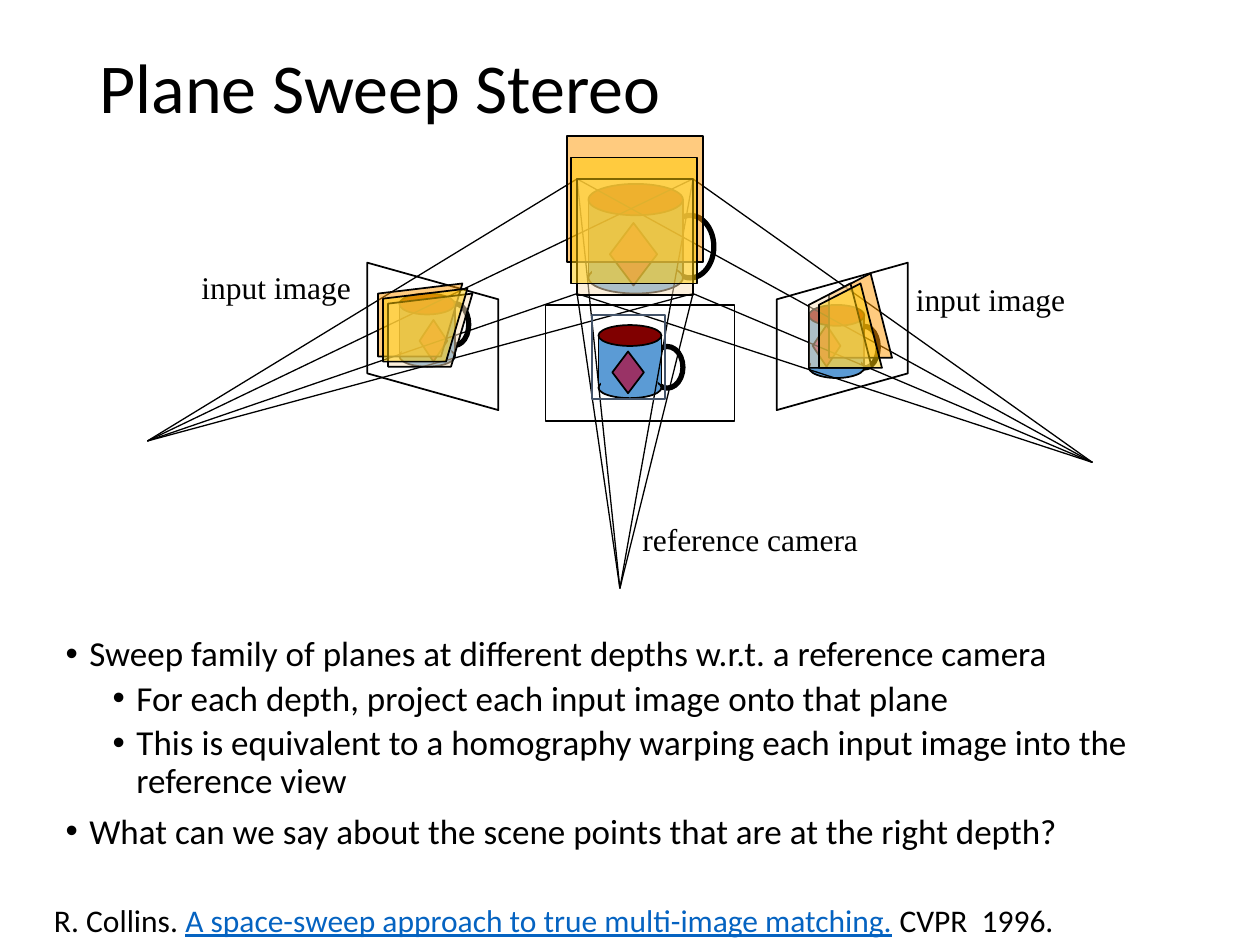
from dataclasses import dataclass

from lxml import etree
from pptx import Presentation
from pptx import util as u
from pptx.dml.color import RGBColor
from pptx.enum import shapes, text
from pptx.oxml.ns import qn


@dataclass(frozen=True)
class Theme:
    ink: str = "000000"
    link: str = "0563C1"
    slate: str = "44546A"
    blue: str = "5B9BD5"
    maroon: str = "800000"
    plum: str = "993366"
    far: str = "FF9900"
    near: str = "FDE3BA"
    middle: str = "FFCC00"
    sans: str = "Calibri"
    serif: str = "Times New Roman"
    title: int = 40
    body: int = 20
    label: int = 18


THEME = Theme()
KIND = shapes.MSO_SHAPE
GRID = 2.54  # centimetres in one diagram unit

# Content
TITLE = "Plane Sweep Stereo"
BULLETS = [
    (0, "Sweep family of planes at different depths w.r.t. a reference camera"),
    (1, "For each depth, project each input image onto that plane"),
    (1, "This is equivalent to a homography warping each input image into the reference view"),
    (0, "What can we say about the scene points that are at the right depth?"),
]
LABELS = [
    ("reference camera", (5, 4.08, 1.92, 0.4)),
    ("input image", (1.5, 2.08, 1.67, 0.4)),
    ("input image", (7.17, 2.17, 1.67, 0.4)),
]
CITATION = [
    ("R. Collins. ", THEME.ink, False),
    ("A space-sweep approach to true multi-image matching.", THEME.link, True),
    (" CVPR  1996.", THEME.ink, False),
]

# Cups: left, top, width, height, then handle and diamond offsets
SCENE_CUP = (4.67, 1.46, 0.75, 0.87, (0.62, 0.25), (0.17, 0.31))
IMAGE_CUPS = [
    (4.75, 2.58, 0.5, 0.58, (0.42, 0.17), (0.11, 0.21)),
    (6.42, 2.42, 0.44, 0.58, (0.33, 0.17), (0.03, 0.16)),
    (3.17, 2.33, 0.44, 0.58, (0.33, 0.08), (0.16, 0.21)),
]

# Rays from each camera to the corners of the near plane
CAMERAS = [(4.92, 4.67), (8.67, 3.67), (1.17, 3.5)]
CORNERS = [(x, y) for y in (1.42, 2.33) for x in (4.58, 5.5)]

# Swept planes: colour, reference rectangle, left and right image origins
PLANES = [
    (THEME.far, (4.5, 1.08, 1.08, 1), (3, 2.25), (6.58, 2.17)),
    (THEME.near, (4.58, 1.42, 0.92, 0.92), (3.08, 2.33), (6.42, 2.25)),
    (THEME.middle, (4.53, 1.25, 1, 1), (3.04, 2.29), (6.5, 2.25)),
]
LEFT_QUAD = [(0, 0.08), (0.67, 0), (0.5, 0.58), (0, 0.58)]
RIGHT_QUAD = [(0, 0.17), (0.33, 0), (0.5, 0.67), (0, 0.67)]


def units(*values):
    return [u.Cm(GRID * value) for value in values]


def paint(shape, fill=None, line=THEME.ink, width=1, alpha=None):
    shape.shadow.inherit = False
    if fill:
        shape.fill.solid()
        shape.fill.fore_color.rgb = RGBColor.from_string(fill)
        if alpha:
            color = shape.fill._xPr.find(qn("a:solidFill"))[0]
            etree.SubElement(color, qn("a:alpha")).set("val", str(alpha * 1000))
    else:
        shape.fill.background()
    if line:
        shape.line.color.rgb = RGBColor.from_string(line)
        shape.line.width = u.Pt(width)
    else:
        shape.line.fill.background()
    return shape


def add_preset(parent, kind, frame, **style):
    return paint(parent.shapes.add_shape(kind, *units(*frame)), **style)


def add_cup(page, cup):
    left, top, width, height, handle, diamond = cup
    group = page.shapes.add_group_shape()
    half = (width / 2, height * 0.57)
    rim = height * 0.286
    add_preset(group, KIND.OVAL, (left + handle[0], top + handle[1], *half), width=3)
    add_preset(group, KIND.RECTANGLE, (left, top + rim / 2, width, height - rim), fill=THEME.blue)
    add_preset(group, KIND.OVAL, (left, top + height - rim, width, rim), fill=THEME.blue)
    add_preset(group, KIND.OVAL, (left, top, width, rim), fill=THEME.maroon)
    add_preset(group, KIND.RECTANGLE,
               (left + width * 0.04, top + height * 0.59, width * 0.9, rim),
               fill=THEME.blue, line=None)
    add_preset(group, KIND.DIAMOND, (left + diamond[0], top + diamond[1], *half), fill=THEME.plum)


def add_rays(page, camera):
    group = page.shapes.add_group_shape()
    for corner in CORNERS:
        ray = group.shapes.add_connector(
            shapes.MSO_CONNECTOR.STRAIGHT, *units(*corner, *camera))
        ray.line.color.rgb = RGBColor.from_string(THEME.ink)
        ray.line.width = u.Pt(0.75)
        etree.SubElement(ray._element.spPr, qn("a:effectLst"))


def add_plane(page, color, frame, left_origin, right_origin):
    group = page.shapes.add_group_shape()
    add_preset(group, KIND.RECTANGLE, frame, fill=color, alpha=50)
    for origin, quad in ((left_origin, LEFT_QUAD), (right_origin, RIGHT_QUAD)):
        points = [units(origin[0] + x, origin[1] + y) for x, y in quad]
        builder = group.shapes.build_freeform(*points[0])
        builder.add_line_segments(points[1:], close=True)
        paint(builder.convert_to_shape(), fill=color, alpha=50)


def place(box, frame, anchor):
    box.left, box.top, box.width, box.height = units(*frame)
    box.text_frame.word_wrap = True
    box.text_frame.auto_size = text.MSO_AUTO_SIZE.NONE
    box.text_frame.vertical_anchor = anchor


def add_span(para, words, size, face=THEME.sans, color=THEME.ink, underline=False):
    span = para.add_run()
    span.text = words
    span.font.size = u.Pt(size)
    span.font.name = face
    span.font.color.rgb = RGBColor.from_string(color)
    span.font.underline = underline


def add_bullets(box):
    for index, (level, words) in enumerate(BULLETS):
        frame = box.text_frame
        para = frame.add_paragraph() if index else frame.paragraphs[0]
        para.level = level
        props = para._p.get_or_add_pPr()
        props.set("marL", str(u.Cm(0.48 + 0.95 * level)))
        props.set("indent", str(-u.Cm(0.48)))
        etree.SubElement(props, qn("a:buFont")).set("typeface", "Arial")
        etree.SubElement(props, qn("a:buChar")).set("char", "•")
        para.line_spacing = 0.9
        para.space_before = u.Pt((3.8 if level else 7.5) if index else 0)
        add_span(para, words, THEME.body)


def main():
    deck = Presentation()
    deck.slide_width, deck.slide_height = u.Cm(25.4), u.Cm(19.05)
    page = deck.slides.add_slide(deck.slide_layouts[1])

    # Title and list
    title, body = page.placeholders
    place(title, (0.69, 0, 8.62, 1.45), text.MSO_ANCHOR.MIDDLE)
    heading = title.text_frame.paragraphs[0]
    heading.alignment = text.PP_ALIGN.LEFT
    heading.line_spacing = 0.9
    add_span(heading, TITLE, THEME.title)
    place(body, (0.42, 5, 9.17, 1.8), text.MSO_ANCHOR.TOP)
    add_bullets(body)

    # Scene and image frames
    add_cup(page, SCENE_CUP)
    add_preset(page, KIND.RECTANGLE, (4.33, 2.42, 1.5, 0.92))
    for left, turn in ((2.85, 90), (6.1, 270)):
        frame = add_preset(page, KIND.PARALLELOGRAM, (left, 2.15, 1.17, 1.04))
        frame.adjustments[0] = 0.28
        frame.rotation = turn
        if turn == 270:
            frame._element.spPr.xfrm.set("flipH", "1")
    for cup in IMAGE_CUPS:
        add_cup(page, cup)

    # Rays and swept planes
    for camera in CAMERAS:
        add_rays(page, camera)
    add_preset(page, KIND.RECTANGLE, (4.7, 2.5, 0.58, 0.67), line=THEME.slate)
    for plane in PLANES:
        add_plane(page, *plane)

    # Labels and citation
    for words, frame in LABELS:
        box = page.shapes.add_textbox(*units(*frame))
        place(box, frame, text.MSO_ANCHOR.TOP)
        add_span(box.text_frame.paragraphs[0], words, THEME.label, THEME.serif)
    frame = (0.33, 7.1, 9.42, 0.4)
    box = page.shapes.add_textbox(*units(*frame))
    place(box, frame, text.MSO_ANCHOR.MIDDLE)
    for words, color, underline in CITATION:
        add_span(box.text_frame.paragraphs[0], words, THEME.label,
                 color=color, underline=underline)

    deck.save("out.pptx")


if __name__ == "__main__":
    main()
